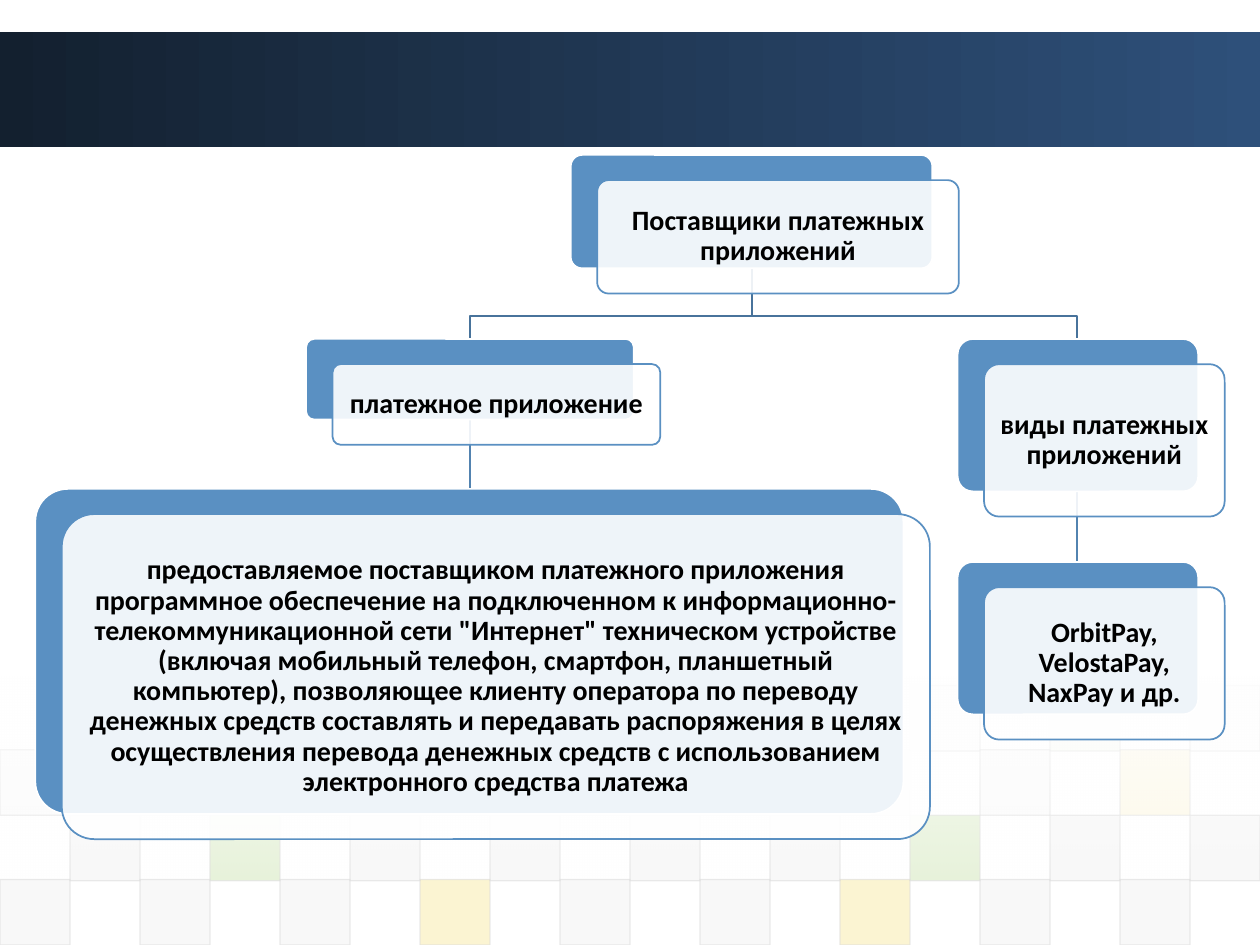
from typing import NamedTuple

from lxml import etree
from pptx import Presentation
from pptx.dml.color import RGBColor
from pptx.enum.shapes import MSO_CONNECTOR, MSO_SHAPE
from pptx.enum.text import MSO_ANCHOR, PP_ALIGN
from pptx.oxml.ns import qn
from pptx.util import Inches, Pt

RECTANGLE = MSO_SHAPE.RECTANGLE
ROUNDED = MSO_SHAPE.ROUNDED_RECTANGLE
STRAIGHT = MSO_CONNECTOR.STRAIGHT
MIDDLE = MSO_ANCHOR.MIDDLE
CENTER = PP_ALIGN.CENTER

COLORS = {
    "band_dark": "13202F",
    "band_light": "2E507A",
    "white": "FFFFFF",
    "black": "000000",
    "blue": "5A90C2",
    "link_upper": "48739B",
    "link_lower": "5283B0",
    "gray": "DDDDDD",
    "pale": "EAEAEA",
    "green": "8AC246",
    "yellow": "EFC821",
}
COLUMN_STEP = 10 / 18
CARD_SHIFT_X, CARD_SHIFT_Y = 0.21, 0.2


class TileRow(NamedTuple):
    top: float
    first_column: int
    opacity: int
    base: str
    accents: dict[int, str]


class Card(NamedTuple):
    left: float
    top: float
    width: float
    height: float
    text: str


TILE_ROWS = [
    TileRow(5.44, 13, 5, "pale", {15: "green"}),
    TileRow(5.95, 0, 10, "gray", {8: "green", 16: "yellow"}),
    TileRow(6.47, 1, 20, "gray", {3: "green", 13: "green"}),
    TileRow(6.98, 0, 20, "gray", {6: "yellow", 12: "yellow"}),
]

CARDS = [
    Card(4.53, 1.23, 2.87, 0.9, "Поставщики платежных приложений"),
    Card(2.43, 2.69, 2.6, 0.64, "платежное приложение"),
    Card(0.28, 3.88, 6.89, 2.58,
         "предоставляемое поставщиком платежного приложения программное "
         "обеспечение на подключенном к информационно-телекоммуникационной "
         "сети \"Интернет\" техническом устройстве (включая мобильный телефон, "
         "смартфон, планшетный компьютер), позволяющее клиенту оператора по "
         "переводу денежных средств составлять и передавать распоряжения в "
         "целях осуществления перевода денежных средств с использованием "
         "электронного средства платежа"),
    Card(7.6, 2.69, 1.91, 1.21, "виды платежных приложений"),
    Card(7.6, 4.46, 1.91, 1.21, "OrbitPay, VelostaPay, NaxPay и др."),
]


def color(name: str) -> RGBColor:
    return RGBColor.from_string(COLORS[name])


def set_opacities(shape, *percents: int) -> None:
    """Apply opacities to the fill and line colours in their drawing order."""
    swatches = shape.element.spPr.iter(qn("a:srgbClr"))
    for swatch, percent in zip(swatches, percents):
        etree.SubElement(swatch, qn("a:alpha"), val=str(percent * 1000))


def style_line(shape, name: str, width: float = 1) -> None:
    shape.line.color.rgb = color(name)
    shape.line.width = Pt(width)


def add_block(shapes, kind, left: float, top: float, width: float, height: float):
    block = shapes.add_shape(
        kind, Inches(left), Inches(top), Inches(width), Inches(height))
    block.shadow.inherit = False
    return block


def add_gradient(shapes, top: float, height: float, start: str, end: str, angle: int):
    band = add_block(shapes, RECTANGLE, 0, top, 10, height)
    band.line.fill.background()
    band.fill.gradient()
    band.fill.gradient_angle = angle
    for stop, name in zip(band.fill.gradient_stops, (start, end)):
        stop.color.rgb = color(name)
    return band


def add_tile_row(shapes, row: TileRow) -> None:
    for column in range(row.first_column, 18, 2):
        tile = add_block(
            shapes, RECTANGLE, column * COLUMN_STEP, row.top, COLUMN_STEP, 0.52)
        tile.fill.solid()
        tile.fill.fore_color.rgb = color(row.accents.get(column, row.base))
        style_line(tile, "gray", 0.75)
        set_opacities(tile, row.opacity, 60)


def add_straight_link(shapes, x: float, top: float, bottom: float) -> None:
    link = shapes.add_connector(
        STRAIGHT, Inches(x), Inches(top), Inches(x), Inches(bottom))
    style_line(link, "link_lower")
    etree.SubElement(link.element.spPr, qn("a:effectLst"))


def add_branch(shapes, start_x: float, end_x: float) -> None:
    points = [(start_x, 2.51), (end_x, 2.51), (end_x, 2.69)]
    builder = shapes.build_freeform(Inches(start_x), Inches(2.13))
    builder.add_line_segments([(Inches(x), Inches(y)) for x, y in points], close=False)
    branch = builder.convert_to_shape()
    branch.shadow.inherit = False
    branch.fill.background()
    style_line(branch, "link_upper")


def add_card_layer(shapes, card: Card, shift_x: float, shift_y: float,
                   fill: str, outline: str):
    layer = add_block(shapes, ROUNDED, card.left + shift_x, card.top + shift_y,
                      card.width, card.height)
    layer.adjustments[0] = 0.1
    layer.fill.solid()
    layer.fill.fore_color.rgb = color(fill)
    style_line(layer, outline)
    return layer


def add_card(shapes, card: Card) -> None:
    add_card_layer(shapes, card, 0, 0, "blue", "white")
    front = add_card_layer(shapes, card, CARD_SHIFT_X, CARD_SHIFT_Y, "white", "blue")
    set_opacities(front, 90)

    frame = front.text_frame
    frame.word_wrap = True
    frame.vertical_anchor = MIDDLE
    frame.margin_left = frame.margin_right = Inches(0.07)
    frame.margin_top = frame.margin_bottom = Inches(0.07)
    para = frame.paragraphs[0]
    para.text = card.text
    para.alignment = CENTER
    para.line_spacing = 0.9
    para.font.name = "Calibri"
    para.font.size = Pt(16)
    para.font.bold = True
    para.font.color.rgb = color("black")


def main() -> None:
    deck = Presentation()
    deck.slide_width, deck.slide_height = Inches(10), Inches(7.5)
    shapes = deck.slides.add_slide(deck.slide_layouts[6]).shapes

    # Header band and faded mosaic
    add_gradient(shapes, 0.25, 0.92, "band_dark", "band_light", 0)
    for row in TILE_ROWS:
        add_tile_row(shapes, row)
    fade = add_gradient(shapes, 5.37, 1.62, "white", "white", 270)
    set_opacities(fade, 90, 0)

    # Links between the cards
    add_straight_link(shapes, 8.55, 3.9, 4.46)
    add_straight_link(shapes, 3.73, 3.32, 3.88)
    for end_x in (8.55, 3.73):
        add_branch(shapes, 5.97, end_x)

    # Hierarchy cards
    for card in CARDS:
        add_card(shapes, card)

    deck.save("out.pptx")


if __name__ == "__main__":
    main()
